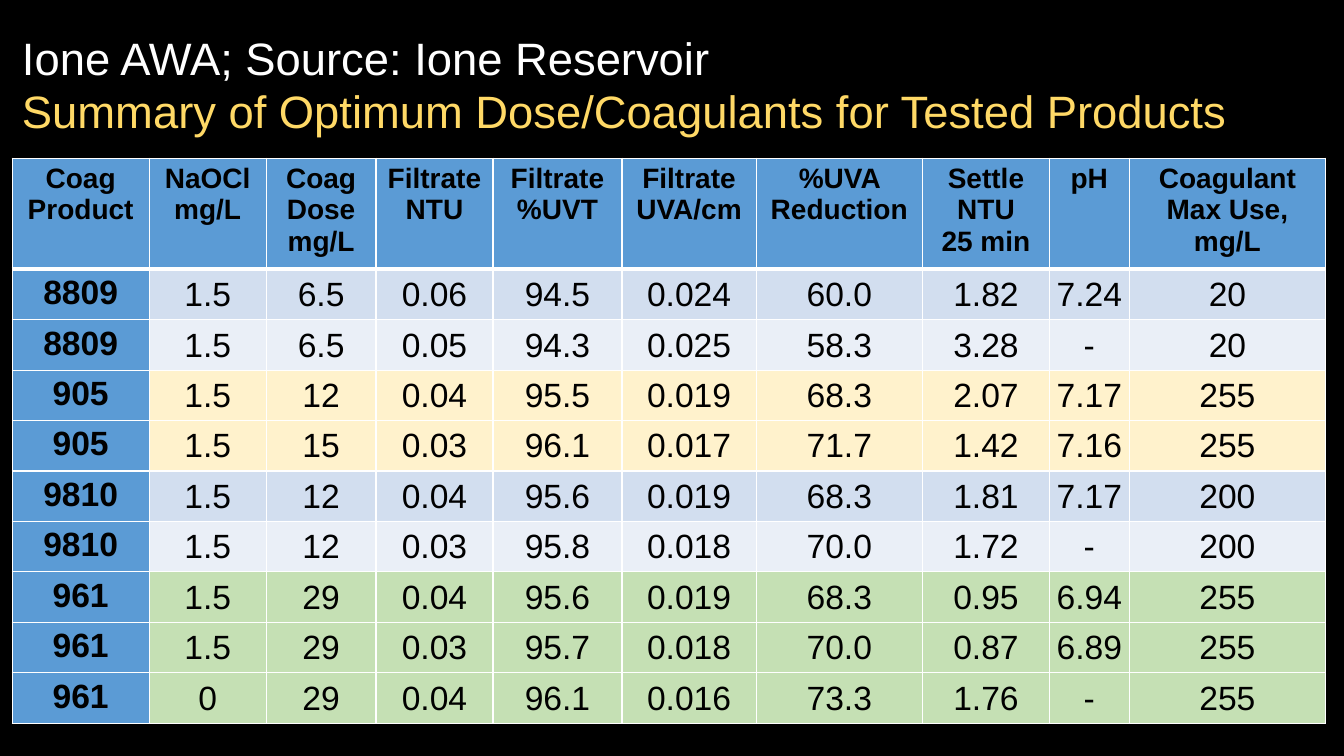
from lxml import etree
from pptx import Presentation
from pptx.dml.color import RGBColor
from pptx.enum.text import MSO_ANCHOR, PP_ALIGN
from pptx.oxml.ns import qn
from pptx.util import Inches, Pt

MIDDLE, TOP = MSO_ANCHOR.MIDDLE, MSO_ANCHOR.TOP
CENTER = PP_ALIGN.CENTER
FONT = "Arial"
BLACK = RGBColor(0x00, 0x00, 0x00)
WHITE = RGBColor(0xFF, 0xFF, 0xFF)
GOLD = RGBColor(0xFF, 0xD9, 0x66)
BLUE = RGBColor(0x5B, 0x9B, 0xD5)
PALE = RGBColor(0xD2, 0xDE, 0xEF)
MIST = RGBColor(0xEA, 0xEF, 0xF7)
CREAM = RGBColor(0xFF, 0xF2, 0xCC)
GREEN = RGBColor(0xC5, 0xE0, 0xB4)

TITLE = [
    ("Ione AWA; Source: Ione Reservoir", WHITE),
    ("Summary of Optimum Dose/Coagulants for Tested Products", GOLD),
]
WIDTHS = [1.36, 1.16, 1.09, 1.16, 1.28, 1.33, 1.65, 1.26, 0.79, 1.95]
HEADS = [
    "Coag\nProduct", "NaOCl\nmg/L", "Coag\nDose\nmg/L", "Filtrate\nNTU",
    "Filtrate\n%UVT", "Filtrate\nUVA/cm", "%UVA Reduction",
    "Settle\nNTU\n25 min", "pH", "Coagulant\nMax Use, mg/L",
]
DOSES = [
    (PALE, "8809 1.5 6.5 0.06 94.5 0.024 60.0 1.82 7.24 20"),
    (MIST, "8809 1.5 6.5 0.05 94.3 0.025 58.3 3.28 - 20"),
    (CREAM, "905 1.5 12 0.04 95.5 0.019 68.3 2.07 7.17 255"),
    (CREAM, "905 1.5 15 0.03 96.1 0.017 71.7 1.42 7.16 255"),
    (PALE, "9810 1.5 12 0.04 95.6 0.019 68.3 1.81 7.17 200"),
    (MIST, "9810 1.5 12 0.03 95.8 0.018 70.0 1.72 - 200"),
    (GREEN, "961 1.5 29 0.04 95.6 0.019 68.3 0.95 6.94 255"),
    (GREEN, "961 1.5 29 0.03 95.7 0.018 70.0 0.87 6.89 255"),
    (GREEN, "961 0 29 0.04 96.1 0.016 73.3 1.76 - 255"),
]
HEAD_TALL, DOSE_TALL = 1.03, 0.47


def add_title(slide):
    """Add the two-line title."""
    box = slide.shapes.add_textbox(Inches(0.12), Inches(0.13), Inches(13.03), Inches(1.45))
    frame = box.text_frame
    frame.word_wrap = True
    frame.vertical_anchor = MIDDLE
    para = frame.paragraphs[0]
    para.line_spacing = 0.97
    para.font.size = Pt(32.4)
    para.font.name = FONT
    for i, (line, color) in enumerate(TITLE):
        if i:
            para.add_line_break()
        run = para.add_run()
        run.text = line
        run.font.color.rgb = color


def add_edge(cell, side, width):
    """Draw one white border of a cell."""
    edge = etree.SubElement(cell._tc.get_or_add_tcPr(), qn(f"a:{side}"), w=str(Pt(width)))
    fill = etree.SubElement(edge, qn("a:solidFill"))
    etree.SubElement(fill, qn("a:srgbClr"), val=str(WHITE))


def fill_cell(cell, text, size, bold, color, above, below):
    """Style a cell and write its centred text."""
    for side, width in (("lnL", 1), ("lnR", 1), ("lnT", above), ("lnB", below)):
        add_edge(cell, side, width)
    cell.fill.solid()
    cell.fill.fore_color.rgb = color
    cell.vertical_anchor = TOP if bold else MIDDLE
    if not bold:
        cell.margin_left = cell.margin_right = cell.margin_top = Inches(0.01)
        cell.margin_bottom = 0
    cell.text_frame.text = text
    for para in cell.text_frame.paragraphs:
        para.alignment = CENTER
        para.font.size = Pt(size)
        para.font.name = FONT
        para.font.bold = bold
        para.font.color.rgb = BLACK


def add_doses(slide):
    """Add the table of doses by product."""
    tall = HEAD_TALL + DOSE_TALL * len(DOSES)
    table = slide.shapes.add_table(
        len(DOSES) + 1, len(HEADS), Inches(0.12), Inches(1.57), Inches(sum(WIDTHS)), Inches(tall)
    ).table
    table.first_col = True
    for col, width in zip(table.columns, WIDTHS):
        col.width = Inches(width)
    for row in table.rows:
        row.height = Inches(DOSE_TALL)
    table.rows[0].height = Inches(HEAD_TALL)
    for c, head in enumerate(HEADS):
        fill_cell(table.cell(0, c), head, 20, True, BLUE, 1, 3)
    for r, (color, line) in enumerate(DOSES, 1):
        above = 3 if r == 1 else 1
        for c, text in enumerate(line.split()):
            first = c == 0
            fill_cell(table.cell(r, c), text, 24, first, BLUE if first else color, above, 1)


def main():
    """Build and save the slide."""
    deck = Presentation()
    deck.slide_width, deck.slide_height = Inches(13.33), Inches(7.5)
    slide = deck.slides.add_slide(deck.slide_layouts[6])
    slide.background.fill.solid()
    slide.background.fill.fore_color.rgb = BLACK
    add_title(slide)
    add_doses(slide)
    deck.save("out.pptx")


if __name__ == "__main__":
    main()
